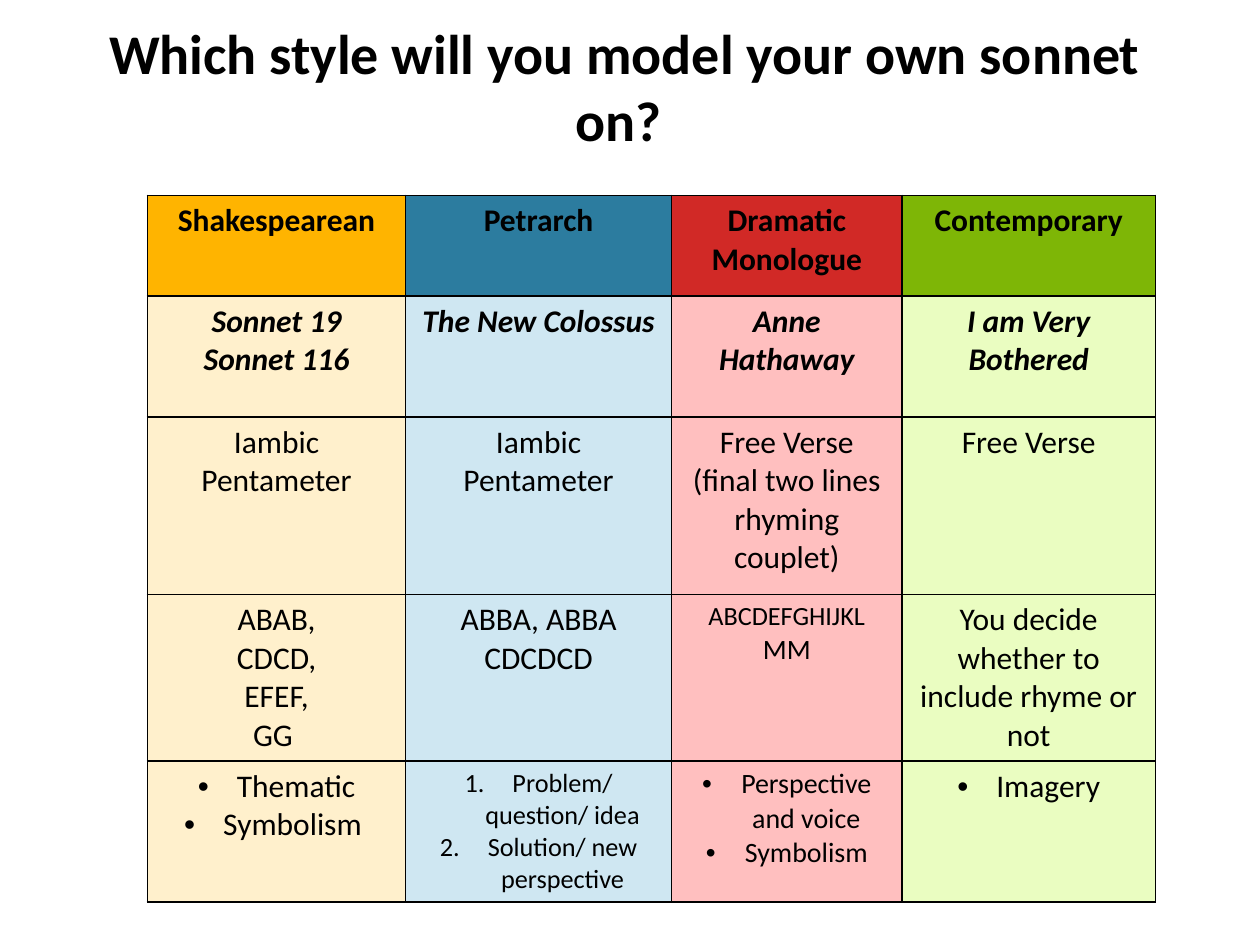
from pptx import Presentation
from pptx import util as u
from pptx.dml.color import RGBColor
from pptx.enum import text
from pptx.oxml import parse_xml
from pptx.oxml.ns import nsdecls

# Content: one tuple per row, one list of lines per cell
TITLE = "Which style will you model your own sonnet on? "
ROWS = [
    (["Shakespearean"], ["Petrarch"], ["Dramatic Monologue"], ["Contemporary"]),
    (["Sonnet 19\vSonnet 116"], ["The New Colossus"], ["Anne Hathaway"],
     ["I am Very Bothered"]),
    (["Iambic Pentameter"], ["Iambic Pentameter"],
     ["Free Verse\v(final two lines rhyming couplet)"], ["Free Verse"]),
    (["ABAB,", "CDCD,", "EFEF,", "GG "], ["ABBA, ABBA", "CDCDCD"],
     ["ABCDEFGHIJKL", "MM"], ["You decide whether to include rhyme or not"]),
    (["Thematic", "Symbolism "],
     ["Problem/ question/ idea", "Solution/ new perspective"],
     ["Perspective and voice", "Symbolism"], ["Imagery"]),
]

THEME = {
    "font": "Calibri", "ink": "000000", "title": 32, "body": 18, "line": 1,
    "head": ["FFB400", "2C7C9F", "D12926", "7EB606"],
    "tint": ["FFF0CC", "CFE7F2", "FFBFBF", "EAFDC1"],
}
# Smaller type, line by line, for cells at (row, column)
SMALL = {(3, 2): [15, 16], (4, 1): [15, 15], (4, 2): [16, 16]}

# Layout in inches
SLIDE = (10, 7.5)
HEAD = (0.56, 0.16, 8.8, 1.1)
LEFT, TOP = 1.17, 1.55
COLS = [2.05, 2.11, 1.83, 2.01]
HIGHS = [0.8, 0.96, 1.41, 1.32, 1.12]
LIST_ROW, NUM_COL = 4, 1


def write(para, words, size=THEME["body"], bold=False, slant=False, mark=None):
    """Fill a centred paragraph; mark is None, "dot" or "num"."""
    para.text = words
    para.alignment = text.PP_ALIGN.CENTER
    for run in para.runs:
        font = run.font
        font.name, font.size = THEME["font"], u.Pt(size)
        font.bold, font.italic = bold, slant
        font.color.rgb = RGBColor.from_string(THEME["ink"])
    if mark:
        dent = u.Inches(0.38 if mark == "num" else 0.31)
        props = para._p.get_or_add_pPr()
        props.set("marL", str(dent))
        props.set("indent", str(-dent))
        tag = ('buAutoNum {} type="arabicPeriod"' if mark == "num"
               else 'buChar {} char="•"')
        if mark == "dot":
            props.append(parse_xml(
                f'<a:buFont {nsdecls("a")} typeface="Arial"/>'))
        props.append(parse_xml("<a:" + tag.format(nsdecls("a")) + "/>"))


def frame(cell):
    """Draw a thin line on all four sides of a cell."""
    for spot, side in enumerate("LRTB"):
        cell._tc.get_or_add_tcPr().insert(spot, parse_xml(
            f'<a:ln{side} {nsdecls("a")} w="{u.Pt(THEME["line"])}"><a:solidFill>'
            f'<a:srgbClr val="{THEME["ink"]}"/></a:solidFill></a:ln{side}>'))


def fill_cell(cell, row, col, lines):
    shade = THEME["tint" if row else "head"][col]
    cell.fill.solid()
    cell.fill.fore_color.rgb = RGBColor.from_string(shade)
    frame(cell)
    sizes = SMALL.get((row, col), [THEME["body"]] * len(lines))
    mark = None
    if row == LIST_ROW:
        mark = "num" if col == NUM_COL else "dot"
    for num, (line, size) in enumerate(zip(lines, sizes)):
        body = cell.text_frame
        para = body.add_paragraph() if num else body.paragraphs[0]
        write(para, line, size=size, bold=row < 2, slant=row == 1, mark=mark)


def main():
    deck = Presentation()
    deck.slide_width, deck.slide_height = map(u.Inches, SLIDE)
    slide = deck.slides.add_slide(deck.slide_layouts[6])

    # Title
    body = slide.shapes.add_textbox(*map(u.Inches, HEAD)).text_frame
    body.word_wrap = True
    body.vertical_anchor = text.MSO_ANCHOR.BOTTOM
    write(body.paragraphs[0], TITLE, size=THEME["title"], bold=True)

    # Table of sonnet styles
    area = map(u.Inches, (LEFT, TOP, sum(COLS), sum(HIGHS)))
    grid = slide.shapes.add_table(len(HIGHS), len(COLS), *area).table
    for col, wide in zip(grid.columns, COLS):
        col.width = u.Inches(wide)
    for row, high in zip(grid.rows, HIGHS):
        row.height = u.Inches(high)
    for row, cells in enumerate(ROWS):
        for col, lines in enumerate(cells):
            fill_cell(grid.cell(row, col), row, col, lines)

    deck.save("out.pptx")


if __name__ == "__main__":
    main()
